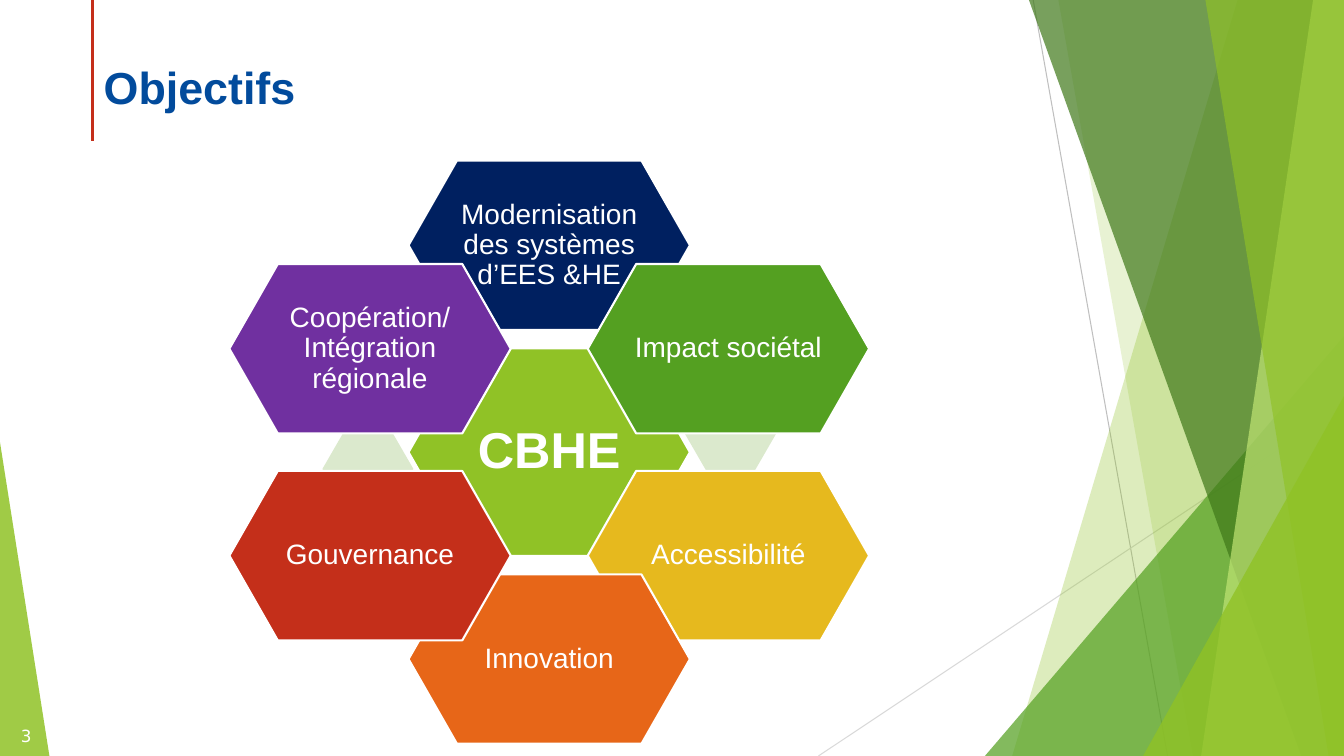
from dataclasses import dataclass
from math import cos, radians, sin

from lxml import etree
from pptx import Presentation
from pptx.dml.color import RGBColor
from pptx.enum.shapes import MSO_CONNECTOR, MSO_SHAPE
from pptx.enum.text import MSO_ANCHOR, PP_ALIGN
from pptx.oxml.ns import qn
from pptx.util import Pt

HEXAGON = MSO_SHAPE.HEXAGON
TRIANGLE = MSO_SHAPE.ISOSCELES_TRIANGLE
STRAIGHT = MSO_CONNECTOR.STRAIGHT
TOP, MIDDLE = MSO_ANCHOR.TOP, MSO_ANCHOR.MIDDLE
LEFT, CENTER = PP_ALIGN.LEFT, PP_ALIGN.CENTER

W, H = 960, 540


@dataclass(frozen=True)
class Theme:
    font: str = "Arial"
    number_font: str = "DejaVu Sans"
    white: str = "FFFFFF"
    title: str = "024B9C"
    lime: str = "90C226"
    pale_lime: str = "C0E474"
    green: str = "54A021"
    dark_green: str = "3F7819"
    navy: str = "002060"
    yellow: str = "E6B91E"
    orange: str = "E76618"
    red: str = "C42F1A"
    purple: str = "7030A0"
    accent: str = "DBE9CD"
    gray: str = "BFBFBF"
    light_gray: str = "D9D9D9"
    title_size: int = 32
    hub_size: int = 36
    petal_size: int = 20
    number_size: int = 12


class Painter:
    def __init__(self, slide, theme):
        self.s = slide
        self.theme = theme

    def style(self, sp, fill, alpha=100, outline=None):
        sp.shadow.inherit = False
        sp.fill.solid()
        sp.fill.fore_color.rgb = RGBColor.from_string(fill)
        if alpha < 100:
            clr = sp._element.spPr.find(qn("a:solidFill"))[0]
            etree.SubElement(clr, qn("a:alpha")).set("val", str(alpha * 1000))
        if outline:
            sp.line.color.rgb = RGBColor.from_string(outline)
            sp.line.width = Pt(1.5)
        else:
            sp.line.fill.background()

    def line(self, x1, y1, x2, y2, color, width):
        cn = self.s.shapes.add_connector(STRAIGHT, Pt(x1), Pt(y1), Pt(x2), Pt(y2))
        cn.line.color.rgb = RGBColor.from_string(color)
        cn.line.width = Pt(width)
        etree.SubElement(cn._element.spPr, qn("a:effectLst"))

    def polygon(self, points, fill, alpha):
        pts = [(Pt(x), Pt(y)) for x, y in points]
        fb = self.s.shapes.build_freeform(*pts[0])
        fb.add_line_segments(pts[1:], close=True)
        self.style(fb.convert_to_shape(), fill, alpha)

    def preset(self, kind, x, y, w, h, adj, fill, alpha=100, outline=None):
        sp = self.s.shapes.add_shape(kind, Pt(x), Pt(y), Pt(w), Pt(h))
        sp.adjustments[0] = adj
        self.style(sp, fill, alpha, outline)

    def hexagon(self, cx, cy, w, h, fill, adj=0.286, outline=None):
        self.preset(HEXAGON, cx - w / 2, cy - h / 2, w, h, adj, fill, outline=outline)

    def text(self, text, x, y, w, h, *, size, color, font=None, bold=False,
             align=CENTER, anchor=MIDDLE, spacing=1.0, inset=(7.2, 3.6)):
        tf = self.s.shapes.add_textbox(Pt(x), Pt(y), Pt(w), Pt(h)).text_frame
        tf.word_wrap = True
        tf.vertical_anchor = anchor
        tf.margin_left = tf.margin_right = Pt(inset[0])
        tf.margin_top = tf.margin_bottom = Pt(inset[1])
        p = tf.paragraphs[0]
        p.alignment = align
        p.line_spacing = spacing
        r = p.add_run()
        r.text = text
        r.font.name = font or self.theme.font
        r.font.size = Pt(size)
        r.font.bold = bold
        r.font.color.rgb = RGBColor.from_string(color)

    def label(self, text, cx, cy, w, h, size, bold=False):
        self.text(text, cx - w / 2, cy - h / 2, w, h, size=size, bold=bold,
                  color=self.theme.white, spacing=0.9, inset=(3.6, 3.6))


def draw_background(d, t):
    d.line(738, 0, 834, H, t.gray, 0.75)
    d.line(W, 290, 584.6, H, t.light_gray, 0.75)

    # Translucent bands: top-left x, bottom-left x, fill, opacity
    def band(top, bottom, fill, alpha):
        d.polygon([(top, 0), (W, 0), (W, H), (bottom, H)], fill, alpha)

    band(884, 723, t.lime, 30)
    band(756, 852, t.lime, 20)
    d.preset(TRIANGLE, 703.5, 240, 256.5, 300, 1, t.green, 72)
    band(735, 929.5, t.dark_green, 70)
    band(938, 858, t.pale_lime, 70)
    band(861, 949, t.lime, 65)
    d.preset(TRIANGLE, 816.5, 283, 143.5, 257, 1, t.lime, 80)
    d.preset(TRIANGLE, 0, 316, 35.3, 224, 0, t.lime, 85)


def draw_flower(d, t):
    cx, cy, radius = 392.3, 323, 147.8
    petal_w, petal_h = 201, 121

    # Hub
    d.hexagon(cx, cy, petal_w, 148.3, t.lime, outline=t.white)
    d.label("CBHE", cx, cy, 140, 102, t.hub_size, bold=True)

    # Petals clockwise from the top, each with the offset of its accent
    petals = [
        (0, "Modernisation des systèmes d’EES &HE", t.navy, (54, -117.5)),
        (1, "Impact sociétal", t.green, (129.5, -13)),
        (2, "Accessibilité", t.yellow, (77, 104)),
        (3, "Innovation", t.orange, (-52.5, 116.5)),
        (4, "Gouvernance", t.red, (-129.5, 12)),
        (5, "Coopération/Intégration régionale", t.purple, None),
    ]
    for step, name, fill, accent in petals:
        angle = radians(60 * step)
        x, y = cx + radius * sin(angle), cy - radius * cos(angle)
        if accent:
            d.hexagon(cx + accent[0], cy + accent[1], 65, 55.5, t.accent, adj=0.289)
        d.hexagon(x, y, petal_w, petal_h, fill, outline=t.white)
        d.label(name, x, y, 145, 87, t.petal_size)


def main():
    prs = Presentation()
    prs.slide_width, prs.slide_height = Pt(W), Pt(H)
    t = Theme()
    d = Painter(prs.slides.add_slide(prs.slide_layouts[6]), t)

    draw_background(d, t)

    # Title with its red rule
    d.line(66, 0, 66, 101, t.red, 2.25)
    d.text("Objectifs", 67, 39, 687, 60.5, size=t.title_size, color=t.title,
           bold=True, align=LEFT, anchor=TOP)

    draw_flower(d, t)

    # Slide number
    d.text("3", 0, 511, 37.5, 29, size=t.number_size, color=t.white,
           font=t.number_font)

    prs.save("out.pptx")


if __name__ == "__main__":
    main()
